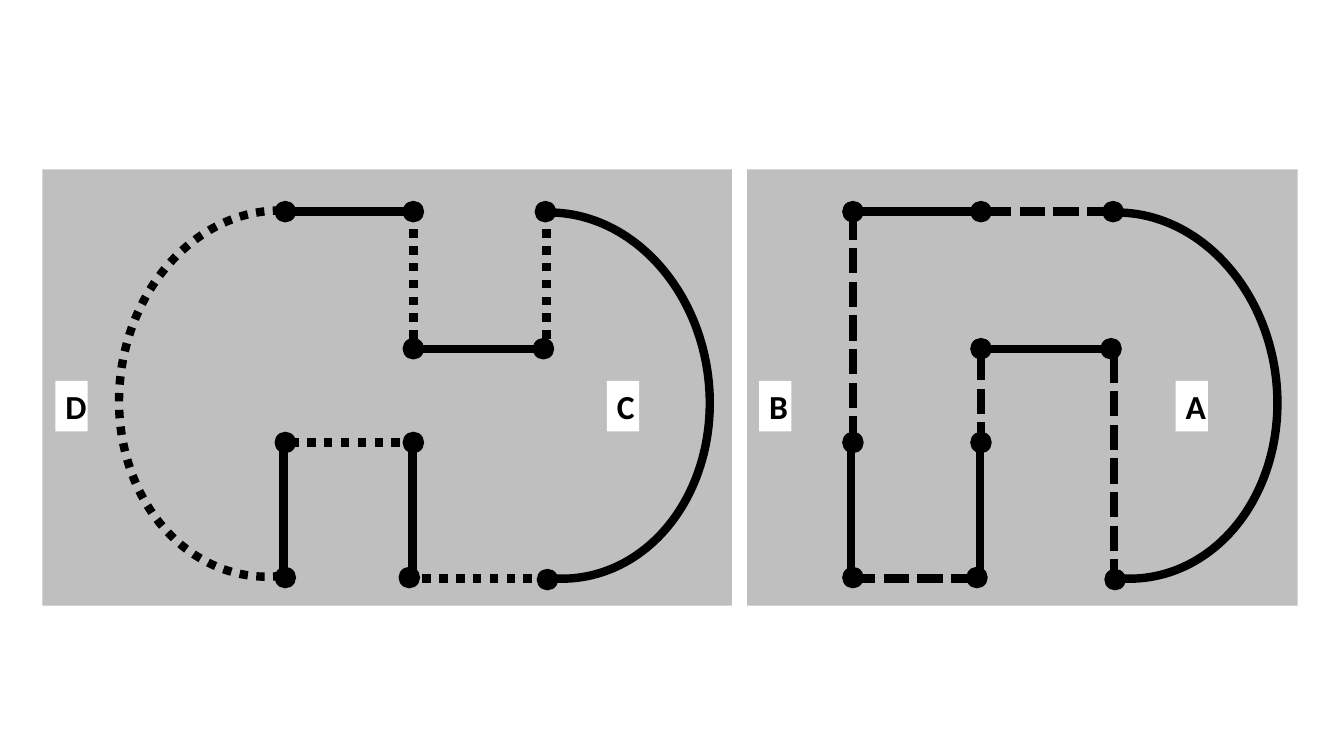
from dataclasses import dataclass

from lxml import etree
from pptx import Presentation
from pptx.dml.color import RGBColor
from pptx.enum.dml import MSO_LINE
from pptx.enum.shapes import MSO_CONNECTOR, MSO_SHAPE
from pptx.enum.text import MSO_ANCHOR, MSO_AUTO_SIZE, PP_ALIGN
from pptx.oxml.ns import qn
from pptx.util import Inches, Pt

RECTANGLE, OVAL, ARC = MSO_SHAPE.RECTANGLE, MSO_SHAPE.OVAL, MSO_SHAPE.ARC
STRAIGHT = MSO_CONNECTOR.STRAIGHT
DOTTED, DASHED = MSO_LINE.ROUND_DOT, MSO_LINE.SQUARE_DOT
CENTER, TOP = PP_ALIGN.CENTER, MSO_ANCHOR.TOP
GROW = MSO_AUTO_SIZE.SHAPE_TO_FIT_TEXT


@dataclass(frozen=True)
class Theme:
    panel: RGBColor = RGBColor(0xBF, 0xBF, 0xBF)
    ink: RGBColor = RGBColor(0, 0, 0)
    label_fill: RGBColor = RGBColor(0xFF, 0xFF, 0xFF)
    font: str = "Calibri"
    label_size: Pt = Pt(24)
    stroke: Pt = Pt(6)
    node_outline: Pt = Pt(1)


THEME = Theme()

# Both figures share these nodes and solid strokes, a fixed distance apart
FIGURE_SHIFT = 5.63
NODE_SIZE = 0.2
NODES = [(2.73, 2), (4, 2), (5.31, 2), (4, 3.36), (5.29, 3.36),
         (2.73, 4.29), (4, 4.29), (2.73, 5.63), (3.96, 5.63), (5.33, 5.65)]
SOLID_STROKES = [(2.88, 2.1, 4.16, 2.1), (4.09, 3.46, 5.37, 3.46),
                 (4.09, 5.74, 4.09, 4.46), (2.81, 5.67, 2.81, 4.39)]

# Broken strokes belong to one figure each
DOTTED_STROKES = [(2.88, 4.39, 4.16, 4.39), (4.1, 3.36, 4.1, 2.08),
                  (5.42, 3.36, 5.42, 2.08), (4.19, 5.74, 5.48, 5.74)]
DASHED_STROKES = [(8.46, 4.38, 8.46, 2), (9.73, 4.44, 9.73, 3.37),
                  (9.78, 2.1, 11.06, 2.1), (8.43, 5.74, 9.71, 5.74),
                  (11.05, 5.8, 11.05, 3.41)]


def add_filled(shapes, kind, left, top, width, height, color):
    shape = shapes.add_shape(kind, Inches(left), Inches(top), Inches(width), Inches(height))
    shape.shadow.inherit = False
    shape.fill.solid()
    shape.fill.fore_color.rgb = color
    shape.line.fill.background()
    return shape


def style_stroke(line, dash=None):
    line.color.rgb = THEME.ink
    line.width = THEME.stroke
    if dash is not None:
        line.dash_style = dash


def add_node(shapes, left, top):
    node = add_filled(shapes, OVAL, left, top, NODE_SIZE, NODE_SIZE, THEME.ink)
    node.line.color.rgb = THEME.ink
    node.line.width = THEME.node_outline


def add_stroke(shapes, x1, y1, x2, y2, dash=None):
    connector = shapes.add_connector(STRAIGHT, Inches(x1), Inches(y1), Inches(x2), Inches(y2))
    style_stroke(connector.line, dash)
    etree.SubElement(connector._element.spPr, qn("a:effectLst"))


def add_arc(shapes, left, top, rotation, dash=None, flipped=False):
    arc = shapes.add_shape(ARC, Inches(left), Inches(top), Inches(3.64), Inches(3.05))
    arc.shadow.inherit = False
    arc.fill.background()
    arc.adjustments[0] = 110.532
    arc.adjustments[1] = 5.555
    arc.rotation = rotation
    if flipped:
        arc._element.spPr.xfrm.set("flipV", "1")
    style_stroke(arc.line, dash)


def add_label(shapes, left, text):
    label = add_filled(shapes, RECTANGLE, left, 3.78, 0.32, 0.5, THEME.label_fill)
    frame = label.text_frame
    frame.word_wrap = True
    frame.auto_size = GROW
    frame.vertical_anchor = TOP
    paragraph = frame.paragraphs[0]
    paragraph.text = text
    paragraph.alignment = CENTER
    paragraph.font.name = THEME.font
    paragraph.font.size = THEME.label_size
    paragraph.font.bold = True
    paragraph.font.color.rgb = THEME.ink


def add_figure(slide, shift, broken_strokes, dash, labels):
    """Draw the shared outline, then this figure's broken strokes and labels."""
    shapes = slide.shapes.add_group_shape().shapes
    for left, top in NODES:
        add_node(shapes, left + shift, top)
    for x1, y1, x2, y2 in SOLID_STROKES:
        add_stroke(shapes, x1 + shift, y1, x2 + shift, y2)
    for stroke in broken_strokes:
        add_stroke(shapes, *stroke, dash)
    add_arc(shapes, 3.69 + shift, 2.4, 83.3)
    for left, text in labels:
        add_label(shapes, left, text)
    return shapes


def main():
    presentation = Presentation()
    presentation.slide_width = Inches(13.33)
    presentation.slide_height = Inches(7.5)
    slide = presentation.slides.add_slide(presentation.slide_layouts[6])

    # Grey panels
    for left, width in [(7.41, 5.46), (0.42, 6.84)]:
        add_filled(slide.shapes, RECTANGLE, left, 1.68, width, 4.33, THEME.panel)

    # Right figure, then left figure with its extra dotted arc
    add_figure(slide, FIGURE_SHIFT, DASHED_STROKES, DASHED, [(7.53, "B"), (11.66, "A")])
    left_figure = add_figure(slide, 0, DOTTED_STROKES, DOTTED, [(6.02, "C"), (0.55, "D")])
    add_arc(left_figure, 0.89, 2.38, 96.7, DOTTED, flipped=True)

    presentation.save("out.pptx")


if __name__ == "__main__":
    main()
